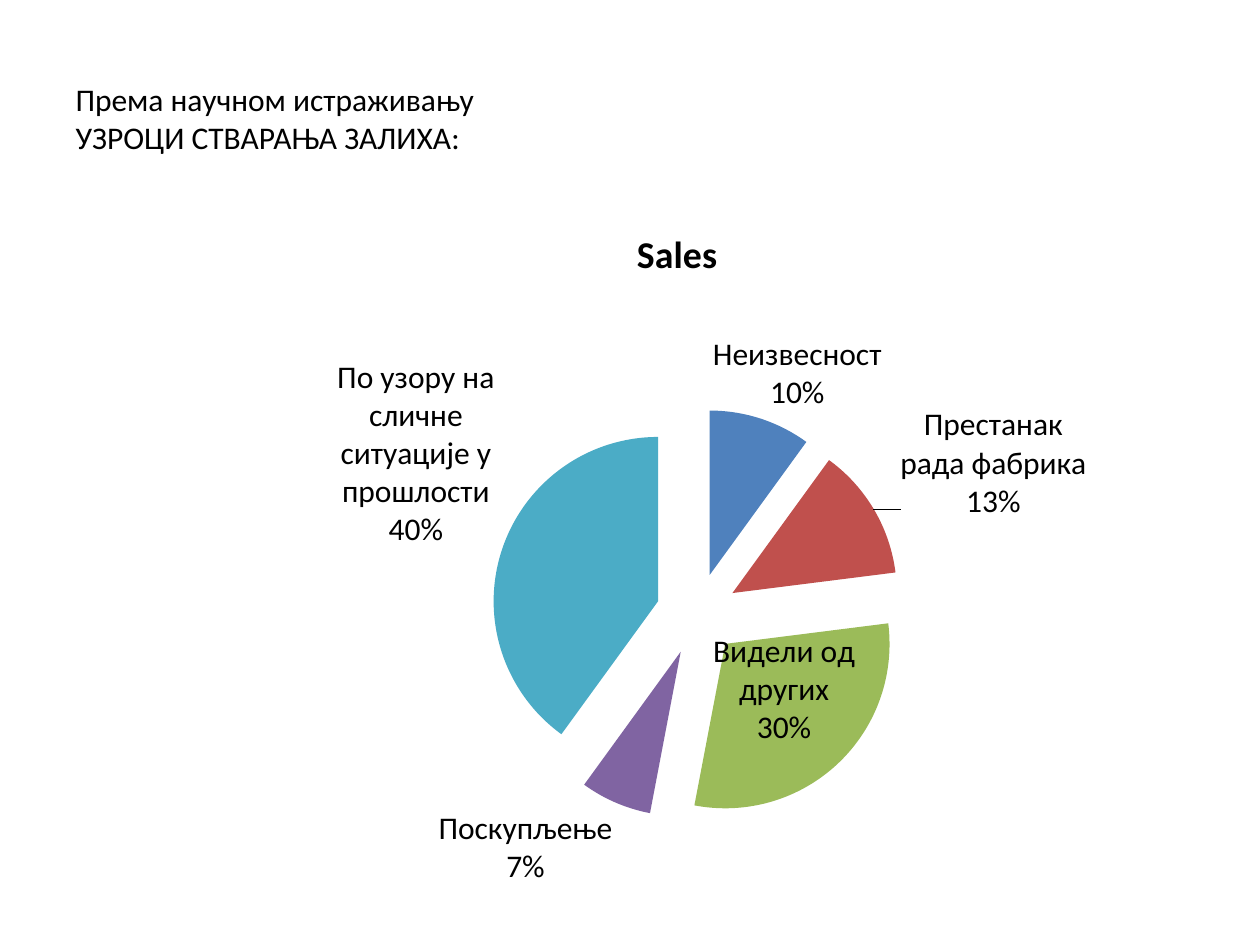
from dataclasses import dataclass

import pptx
import pptx.chart.data
import pptx.dml.color
import pptx.enum.chart
import pptx.enum.text
import pptx.oxml
import pptx.oxml.ns
import pptx.util

FONT = "Calibri"
TEXT_SIZE = 18
CHART_TITLE_SIZE = 21.6
COLORS = {
    "text": "000000",
    "blue": "4F81BD",
    "red": "C0504D",
    "green": "9BBB59",
    "purple": "8064A2",
    "teal": "4BACC6",
}
HEADING = ["Према научном истраживању", "УЗРОЦИ СТВАРАЊА ЗАЛИХА:"]


@dataclass
class Cause:
    name: str
    percent: int
    color: str
    label_shift: tuple[float, float] = (0, 0)


@dataclass
class Box:
    left: float
    top: float
    width: float
    height: float


CAUSES = [
    Cause("Неизвесност", 10, "blue", (-0.05, 0)),
    Cause("Престанак рада фабрика", 13, "red", (0.02, 0.02)),
    Cause("Видели од других", 30, "green", (-0.13, -0.19)),
    Cause("Поскупљење", 7, "purple"),
    Cause("По узору на сличне ситуације у прошлости", 40, "teal"),
]
HEADING_BOX = Box(36, 42, 408, 51)
CHART_BOX = Box(102, 114, 570, 412)
PLOT_AREA = Box(0.31, 0.29, 0.42, 0.57)


def color(name: str) -> pptx.dml.color.RGBColor:
    return pptx.dml.color.RGBColor.from_string(COLORS[name])


def format_font(font, size: float, bold: bool = False) -> None:
    font.name = FONT
    font.size = pptx.util.Pt(size)
    font.bold = bold
    font.color.rgb = color("text")


def chart_element(tag: str, content: str = "", attributes: str = ""):
    namespace = pptx.oxml.ns.nsdecls("c")
    return pptx.oxml.parse_xml(f"<c:{tag} {namespace} {attributes}>{content}</c:{tag}>")


def add_heading(slide) -> None:
    title = slide.shapes.title
    title.left = pptx.util.Pt(HEADING_BOX.left)
    title.top = pptx.util.Pt(HEADING_BOX.top)
    title.width = pptx.util.Pt(HEADING_BOX.width)
    title.height = pptx.util.Pt(HEADING_BOX.height)
    text_frame = title.text_frame
    text_frame.text = "\n".join(HEADING)
    text_frame.word_wrap = True
    text_frame.auto_size = pptx.enum.text.MSO_AUTO_SIZE.NONE
    text_frame.vertical_anchor = pptx.enum.text.MSO_ANCHOR.TOP
    for paragraph in text_frame.paragraphs:
        paragraph.alignment = pptx.enum.text.PP_ALIGN.LEFT
        for run in paragraph.runs:
            format_font(run.font, TEXT_SIZE)


def place_plot_area(chart) -> None:
    plot_area = chart.element.find(".//" + pptx.oxml.ns.qn("c:plotArea"))
    for old_layout in plot_area.findall(pptx.oxml.ns.qn("c:layout")):
        plot_area.remove(old_layout)
    content = (
        '<c:manualLayout><c:layoutTarget val="inner"/>'
        '<c:xMode val="edge"/><c:yMode val="edge"/>'
        f'<c:x val="{PLOT_AREA.left}"/><c:y val="{PLOT_AREA.top}"/>'
        f'<c:w val="{PLOT_AREA.width}"/><c:h val="{PLOT_AREA.height}"/>'
        "</c:manualLayout>"
    )
    plot_area.insert(0, chart_element("layout", content))


def shifted_label(index: int, shift: tuple[float, float]):
    content = (
        f'<c:idx val="{index}"/><c:layout><c:manualLayout>'
        f'<c:x val="{shift[0]}"/><c:y val="{shift[1]}"/>'
        '</c:manualLayout></c:layout><c:dLblPos val="outEnd"/>'
        '<c:showLegendKey val="0"/><c:showVal val="0"/>'
        '<c:showCatName val="1"/><c:showSerName val="0"/>'
        '<c:showPercent val="1"/><c:showBubbleSize val="0"/>'
        "<c:separator>\n</c:separator>"
    )
    return chart_element("dLbl", content)


def add_labels(series) -> None:
    labels = series.data_labels
    format_font(labels.font, TEXT_SIZE)
    labels.position = pptx.enum.chart.XL_LABEL_POSITION.OUTSIDE_END
    labels.show_value = False
    labels.show_category_name = True
    labels.show_percentage = True
    element = labels._element
    bubble_size = element.find(pptx.oxml.ns.qn("c:showBubbleSize"))
    bubble_size.addnext(chart_element("separator", "\n"))
    shifted = [(i, cause) for i, cause in enumerate(CAUSES) if any(cause.label_shift)]
    for position, (index, cause) in enumerate(shifted):
        element.insert(position, shifted_label(index, cause.label_shift))


def add_causes_chart(slide) -> None:
    chart_data = pptx.chart.data.CategoryChartData()
    chart_data.categories = [cause.name for cause in CAUSES]
    chart_data.add_series("Sales", [cause.percent for cause in CAUSES])
    chart = slide.shapes.add_chart(
        pptx.enum.chart.XL_CHART_TYPE.PIE,
        pptx.util.Pt(CHART_BOX.left),
        pptx.util.Pt(CHART_BOX.top),
        pptx.util.Pt(CHART_BOX.width),
        pptx.util.Pt(CHART_BOX.height),
        chart_data,
    ).chart
    format_font(chart.font, TEXT_SIZE)
    chart.has_legend = False
    chart.has_title = True
    chart.chart_title.text_frame.text = "Sales"
    chart.chart_title.include_in_layout = False
    for run in chart.chart_title.text_frame.paragraphs[0].runs:
        format_font(run.font, CHART_TITLE_SIZE, bold=True)
    place_plot_area(chart)

    plot = chart.plots[0]
    plot.vary_by_categories = True
    series = plot.series[0]
    for index, cause in enumerate(CAUSES):
        fill = series.points[index].format.fill
        fill.solid()
        fill.fore_color.rgb = color(cause.color)
    series_name = series._element.find(pptx.oxml.ns.qn("c:tx"))
    series_name.addnext(chart_element("explosion", attributes='val="25"'))
    add_labels(series)


def main() -> None:
    presentation = pptx.Presentation()
    presentation.slide_width = pptx.util.Pt(720)
    presentation.slide_height = pptx.util.Pt(540)
    slide = presentation.slides.add_slide(presentation.slide_layouts[5])
    add_causes_chart(slide)
    add_heading(slide)
    presentation.save("out.pptx")


if __name__ == "__main__":
    main()
